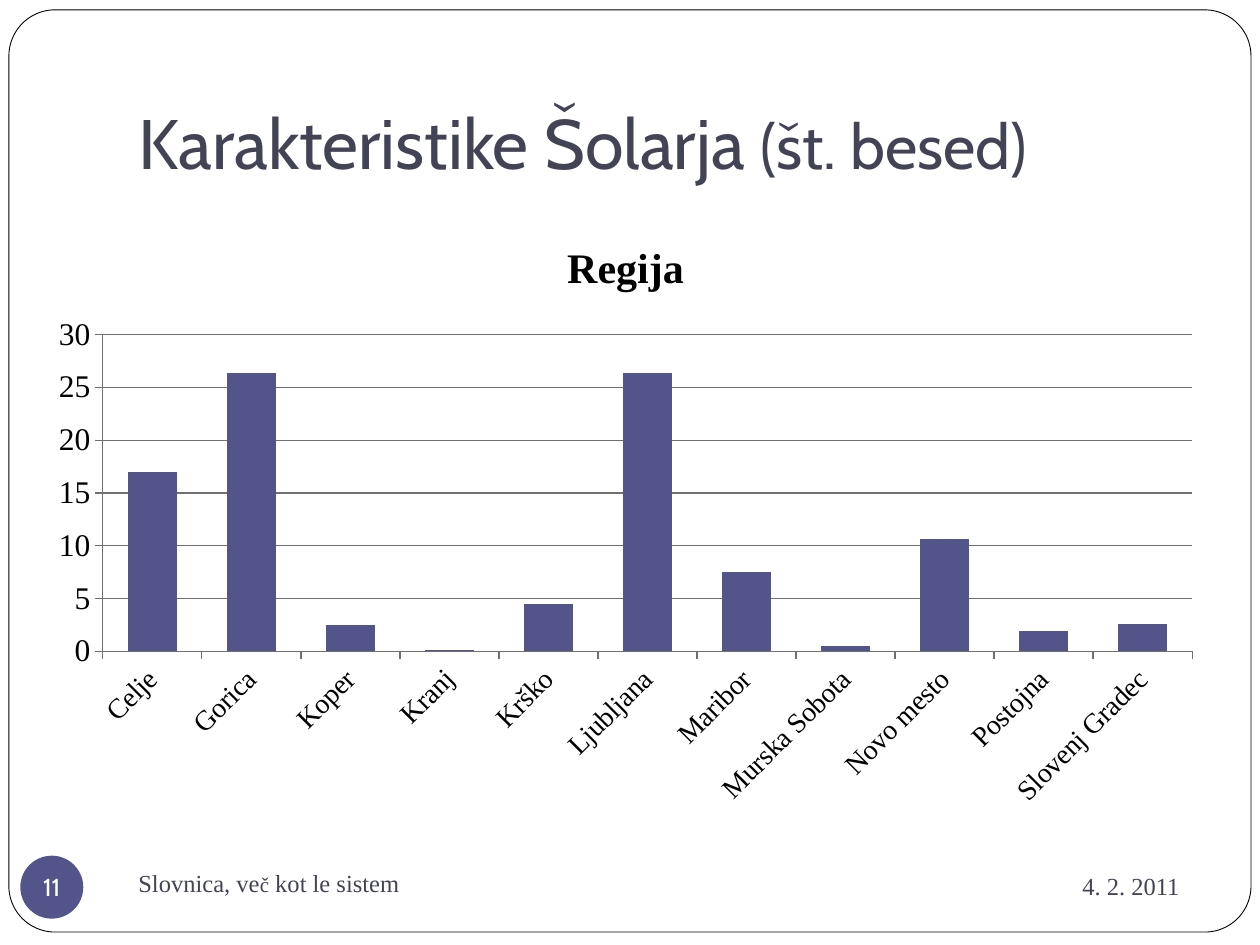
from dataclasses import dataclass

from lxml.etree import SubElement
from pptx import Presentation
from pptx.chart.data import CategoryChartData
from pptx.dml.color import RGBColor
from pptx.enum.chart import XL_CHART_TYPE, XL_TICK_MARK
from pptx.enum.shapes import MSO_SHAPE
from pptx.enum.text import MSO_ANCHOR, MSO_AUTO_SIZE, PP_ALIGN
from pptx.oxml.ns import qn
from pptx.util import Cm, Pt

COLORS = {
    "white": "FFFFFF",
    "black": "000000",
    "slate": "424456",
    "indigo": "53548A",
    "grid": "707070",
}
HEADING_FONT = "Cabin"
BODY_FONT = "Times New Roman"

REGIONS = {
    "Celje": 17,
    "Gorica": 26.4,
    "Koper": 2.5,
    "Kranj": 0.1,
    "Krško": 4.5,
    "Ljubljana": 26.4,
    "Maribor": 7.5,
    "Murska Sobota": 0.5,
    "Novo mesto": 10.6,
    "Postojna": 1.9,
    "Slovenj Gradec": 2.6,
}


@dataclass(frozen=True)
class Box:
    left: float
    top: float
    width: float
    height: float

    def lengths(self) -> tuple:
        return Cm(self.left), Cm(self.top), Cm(self.width), Cm(self.height)


@dataclass(frozen=True)
class Run:
    text: str
    size: float


@dataclass(frozen=True)
class Label:
    box: Box
    runs: tuple
    alignment: PP_ALIGN


CARD = Box(0.18, 0.2, 25.04, 18.59)
TITLE = Box(2.54, 0.76, 21.59, 3.18)
CHART = Box(0.71, 4.32, 23.8, 12.19)
BADGE = Box(0.41, 17.25, 1.27, 1.27)
LABELS = (
    Label(Box(17.15, 17.2, 6.88, 1.32), (Run("4. 2. 2011", 14),), PP_ALIGN.RIGHT),
    Label(
        Box(2.54, 17.15, 11, 1.27),
        (Run("Slovnica, ve", 14), Run("č", 12), Run(" kot le sistem", 14)),
        PP_ALIGN.LEFT,
    ),
)


def color(name: str) -> RGBColor:
    return RGBColor.from_string(COLORS[name])


def style_font(font, name: str, size: float, color_name: str, bold: bool = False) -> None:
    values = {"name": name, "size": Pt(size), "bold": bold}
    for attribute, value in values.items():
        setattr(font, attribute, value)
    font.color.rgb = color(color_name)


def write(frame, runs: tuple, font_name: str, color_name: str, alignment: PP_ALIGN, **settings) -> None:
    for attribute, value in settings.items():
        setattr(frame, attribute, value)
    paragraph = frame.paragraphs[0]
    paragraph.alignment = alignment
    for item in runs:
        run = paragraph.add_run()
        run.text = item.text
        style_font(run.font, font_name, item.size, color_name)


def add_filled_shape(slide, kind: MSO_SHAPE, box: Box, fill: str):
    shape = slide.shapes.add_shape(kind, *box.lengths())
    shape.shadow.inherit = False
    shape.fill.solid()
    shape.fill.fore_color.rgb = color(fill)
    return shape


def add_title(slide):
    title = slide.shapes.title
    title.left, title.top, title.width, title.height = TITLE.lengths()
    runs = (Run("Karakteristike Šolarja ", 40), Run("(št. besed)", 36))
    write(
        title.text_frame, runs, HEADING_FONT, "slate", PP_ALIGN.LEFT,
        vertical_anchor=MSO_ANCHOR.BOTTOM, auto_size=MSO_AUTO_SIZE.NONE,
        word_wrap=True, margin_bottom=Cm(0.25),
    )
    return title


def add_card(slide, title) -> None:
    card = add_filled_shape(slide, MSO_SHAPE.ROUNDED_RECTANGLE, CARD, "white")
    card.adjustments[0] = 0.05
    card.line.color.rgb = color("black")
    card.line.width = Pt(0.5)
    title.element.addprevious(card.element)


def add_label(slide, label: Label) -> None:
    text_box = slide.shapes.add_textbox(*label.box.lengths())
    write(
        text_box.text_frame, label.runs, BODY_FONT, "slate", label.alignment,
        vertical_anchor=MSO_ANCHOR.MIDDLE, word_wrap=True,
    )


def add_badge(slide) -> None:
    badge = add_filled_shape(slide, MSO_SHAPE.OVAL, BADGE, "indigo")
    badge.line.fill.background()
    write(
        badge.text_frame, (Run("11", 14),), HEADING_FONT, "white", PP_ALIGN.CENTER,
        vertical_anchor=MSO_ANCHOR.MIDDLE, word_wrap=False,
        margin_left=0, margin_right=0, margin_top=0, margin_bottom=0,
    )


def style_line(line) -> None:
    line.color.rgb = color("grid")
    line.width = Pt(0.75)


def style_axis(axis, size: float) -> None:
    axis.major_tick_mark = XL_TICK_MARK.OUTSIDE
    axis.minor_tick_mark = XL_TICK_MARK.NONE
    style_line(axis.format.line)
    style_font(axis.tick_labels.font, BODY_FONT, size, "black")


def add_region_chart(slide) -> None:
    data = CategoryChartData()
    data.categories = list(REGIONS)
    data.add_series("Series 1", list(REGIONS.values()))
    frame = slide.shapes.add_chart(XL_CHART_TYPE.COLUMN_CLUSTERED, *CHART.lengths(), data)
    chart = frame.chart
    style_font(chart.font, BODY_FONT, 10, "black")
    chart.has_legend = False

    chart.has_title = True
    chart.chart_title.include_in_layout = False
    heading = chart.chart_title.text_frame
    heading.text = "Regija"
    style_font(heading.paragraphs[0].runs[0].font, BODY_FONT, 24, "black", bold=True)

    style_axis(chart.category_axis, 16)
    style_axis(chart.value_axis, 18)
    body = chart.category_axis.tick_labels.font and chart.element.find(
        f".//{qn('c:catAx')}/{qn('c:txPr')}/{qn('a:bodyPr')}"
    )
    body.set("rot", "-2700000")
    body.set("vert", "horz")

    value_axis = chart.value_axis
    for attribute, value in {"minimum_scale": 0, "maximum_scale": 30, "major_unit": 5}.items():
        setattr(value_axis, attribute, value)
    style_line(value_axis.major_gridlines.format.line)

    plot = chart.plots[0]
    plot.gap_width = 100
    plot.vary_by_categories = False
    fill = plot.series[0].format.fill
    fill.solid()
    fill.fore_color.rgb = color("indigo")


def main() -> None:
    presentation = Presentation()
    presentation.slide_width, presentation.slide_height = Cm(25.4), Cm(19.05)
    slide = presentation.slides.add_slide(presentation.slide_layouts[5])
    title = add_title(slide)
    add_card(slide, title)
    for label in LABELS:
        add_label(slide, label)
    add_badge(slide)
    add_region_chart(slide)
    presentation.save("out.pptx")


if __name__ == "__main__":
    main()
